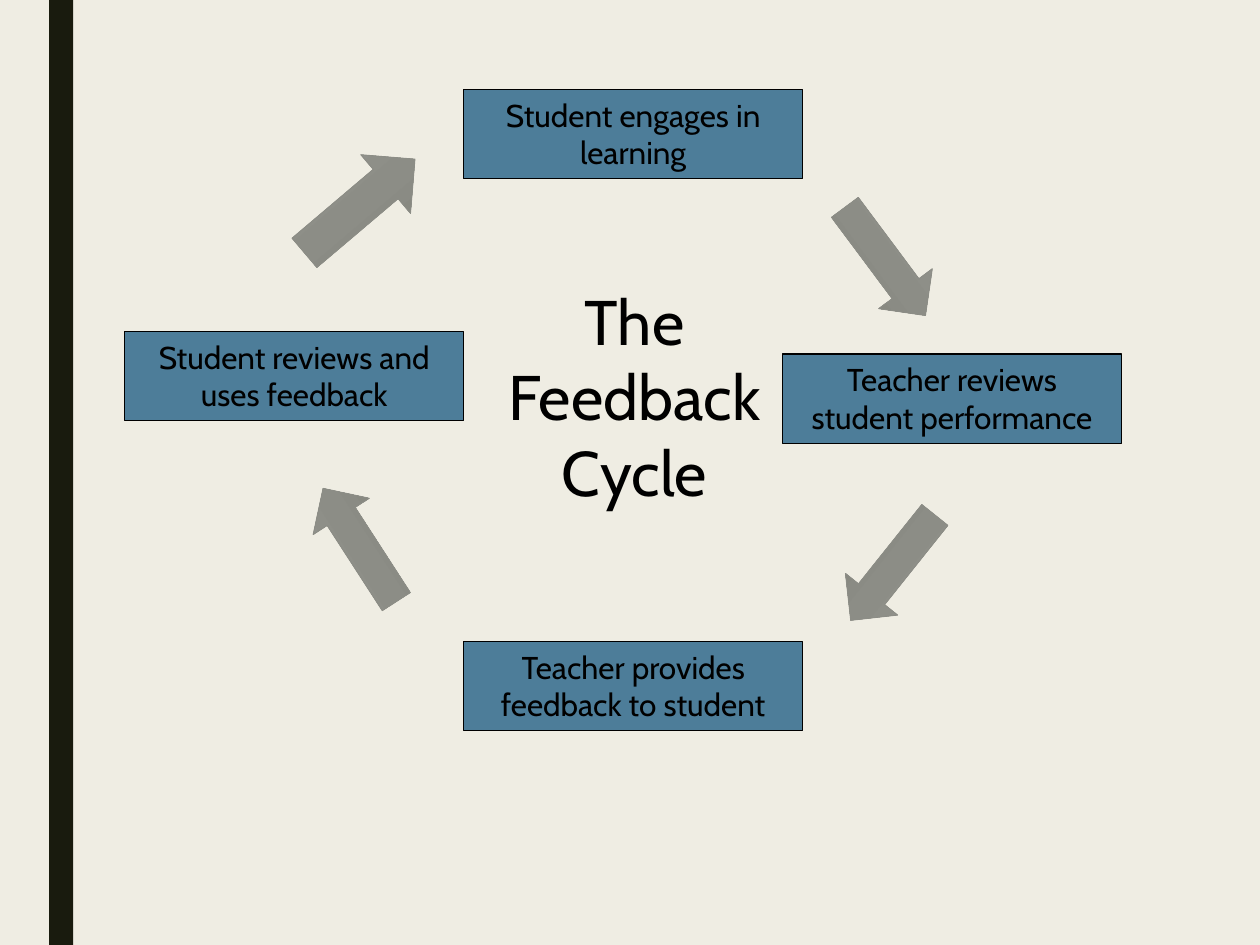
import copy

import pptx
import pptx.dml.color
import pptx.enum.shapes
import pptx.enum.text
import pptx.util
from pptx.util import Inches

RGBColor = pptx.dml.color.RGBColor
Shape = pptx.enum.shapes.MSO_SHAPE
CREAM = RGBColor(0xEF, 0xED, 0xE3)
DARK_OLIVE = RGBColor(0x19, 0x1B, 0x0E)
BLUE = RGBColor(0x4D, 0x7D, 0x99)
BLACK = RGBColor(0, 0, 0)
GRAY = RGBColor(0x8C, 0x8D, 0x86)
GRAY_STOPS = [RGBColor(0x99, 0x9A, 0x94), GRAY, RGBColor(0x7D, 0x7E, 0x76)]


def write_text(shape, text, size=18, color=BLACK, font="Cabin",
               anchor=pptx.enum.text.MSO_ANCHOR.TOP):
    frame = shape.text_frame
    frame.word_wrap = True
    frame.auto_size = pptx.enum.text.MSO_AUTO_SIZE.SHAPE_TO_FIT_TEXT
    frame.vertical_anchor = anchor
    para = frame.paragraphs[0]
    para.alignment = pptx.enum.text.PP_ALIGN.CENTER
    span = para.add_run()
    span.text = text
    span.font.name = font
    span.font.size = pptx.util.Pt(size)
    span.font.color.rgb = color


def add_filled_shape(kind, left, top, width, height, fill=None, line=None, line_width=0.75):
    shape = page.shapes.add_shape(kind, Inches(left), Inches(top), Inches(width), Inches(height))
    shape.shadow.inherit = False
    if fill is not None:
        shape.fill.solid()
        shape.fill.fore_color.rgb = fill
    if line is None:
        shape.line.fill.background()
    else:
        shape.line.color.rgb = line
        shape.line.width = pptx.util.Pt(line_width)
    return shape


deck = pptx.Presentation()
deck.slide_width = Inches(10)
deck.slide_height = Inches(7.5)
page = deck.slides.add_slide(deck.slide_layouts[6])

# Background and side band
page.background.fill.solid()
page.background.fill.fore_color.rgb = CREAM
add_filled_shape(Shape.RECTANGLE, 0.39, 0, 0.19, 7.5, fill=DARK_OLIVE)

# Steps of the cycle, clockwise from the top
steps = [
    ("Student engages in learning", 3.68, 0.71),
    ("Teacher reviews student performance", 6.21, 2.81),
    ("Teacher provides feedback to student", 3.68, 5.09),
    ("Student reviews and uses feedback", 0.99, 2.63),
]
for text, left, top in steps:
    box = add_filled_shape(Shape.RECTANGLE, left, top, 2.69, 0.71, fill=BLUE, line=BLACK)
    write_text(box, text)

# Arrows between the steps
arrows = [
    (6.49, 1.81, 1.07, 0.53, 53.3),
    (6.55, 4.24, 1.07, 0.53, 128.6),
    (2.32, 4.06, 1.07, 0.53, 237.1),
    (2.28, 1.33, 1.15, 0.61, 319.7),
]
for left, top, width, height, angle in arrows:
    arrow = add_filled_shape(Shape.RIGHT_ARROW, left, top, width, height,
                             line=GRAY, line_width=0.5)
    arrow.rotation = angle
    arrow.fill.gradient()
    arrow.fill.gradient_angle = 270
    # A new gradient has two stops; a third goes between them
    stop_list = arrow.element.xpath("./p:spPr/a:gradFill/a:gsLst")[0]
    stop_list.insert(1, copy.deepcopy(stop_list[0]))
    for index, (stop, color) in enumerate(zip(arrow.fill.gradient_stops, GRAY_STOPS)):
        stop.position = index / 2
        stop.color.rgb = color

# Title in the centre
title = page.shapes.add_textbox(Inches(3.89), Inches(2.19), Inches(2.29), Inches(1.92))
write_text(title, "The Feedback Cycle", size=36)

deck.save("out.pptx")
